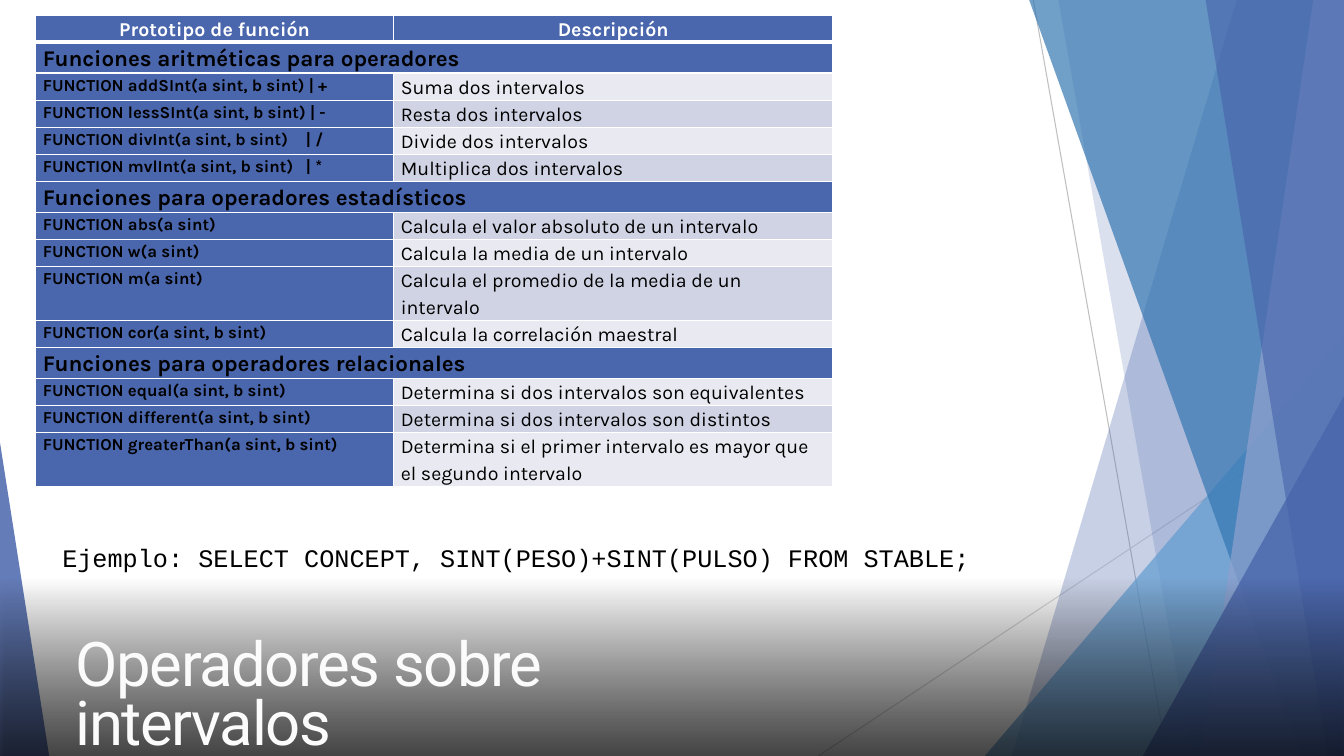
import dataclasses
import typing

import lxml.etree
import pptx
import pptx.dml.color
import pptx.enum.shapes
import pptx.enum.text
import pptx.oxml.ns
import pptx.util

Cm = pptx.util.Cm
Pt = pptx.util.Pt
qn = pptx.oxml.ns.qn
WIDTH, HEIGHT = 33.87, 19.05


@dataclasses.dataclass(frozen=True)
class Theme:
    blue: str = "4A66AC"
    sky: str = "629DD1"
    ocean: str = "3477B2"
    lavender: str = "90A2CF"
    band_light: str = "E9EAF1"
    band_dark: str = "D0D3E3"
    black: str = "000000"
    white: str = "FFFFFF"
    title_white: str = "FBFBFB"
    line_dark: str = "BFBFBF"
    line_light: str = "D9D9D9"
    title_size: int = 44
    example_size: int = 18
    section_size: int = 16
    body_size: int = 14
    function_size: int = 12
    title_font: str = "Roboto"
    table_font: str = "Karla"
    code_font: str = "Courier New"


THEME = Theme()


@dataclasses.dataclass(frozen=True)
class Ray:
    x1: float
    y1: float
    x2: float
    y2: float
    color: str


@dataclasses.dataclass(frozen=True)
class Band:
    top_x: float
    bottom_x: float
    color: str
    opacity: int


@dataclasses.dataclass(frozen=True)
class Corner:
    left: float
    width: float
    height: float
    apex: float
    color: str
    opacity: int


@dataclasses.dataclass(frozen=True)
class Row:
    name: str
    description: str = ""
    height: float = 0.61


RAYS = [
    Ray(26.04, 0, 29.41, HEIGHT, THEME.line_dark),
    Ray(WIDTH, 10.24, 20.62, HEIGHT, THEME.line_light),
]
FACETS = [
    Band(31.17, 25.5, THEME.blue, 30),
    Band(26.67, 30.02, THEME.blue, 20),
    Corner(24.82, 9.05, 10.59, 1, THEME.sky, 72),
    Band(25.93, 32.79, THEME.ocean, 70),
    Band(33.1, 30.28, THEME.lavender, 70),
    Band(30.38, 33.45, THEME.blue, 65),
    Corner(28.8, 5.07, 9.07, 1, THEME.blue, 80),
    Corner(0, 1.24, 7.9, 0, THEME.blue, 85),
]
ROWS = [
    Row("Prototipo de función", "Descripción"),
    Row("Funciones aritméticas para operadores"),
    Row("FUNCTION addSInt(a sint, b sint) | +", "Suma dos intervalos"),
    Row("FUNCTION lessSInt(a sint, b sint) | -", "Resta dos intervalos"),
    Row("FUNCTION divInt(a sint, b sint)\t| /", "Divide dos intervalos"),
    Row("FUNCTION mvlInt(a sint, b sint)\t| *", "Multiplica dos intervalos"),
    Row("Funciones para operadores estadísticos"),
    Row("FUNCTION abs(a sint)", "Calcula el valor absoluto de un intervalo"),
    Row("FUNCTION w(a sint)", "Calcula la media de un intervalo"),
    Row("FUNCTION m(a sint)", "Calcula el promedio de la media de un intervalo", 1.27),
    Row("FUNCTION cor(a sint, b sint)", "Calcula la correlación maestral"),
    Row("Funciones para operadores relacionales"),
    Row("FUNCTION equal(a sint, b sint)", "Determina si dos intervalos son equivalentes"),
    Row("FUNCTION different(a sint, b sint)", "Determina si dos intervalos son distintos"),
    Row("FUNCTION greaterThan(a sint, b sint)",
        "Determina si el primer intervalo es mayor que el segundo intervalo", 1.27),
]


def rgb(color: str) -> pptx.dml.color.RGBColor:
    return pptx.dml.color.RGBColor.from_string(color)


def child(parent: typing.Any, tag: str, **attrs: typing.Any) -> typing.Any:
    values = {key: str(value) for key, value in attrs.items()}
    return lxml.etree.SubElement(parent, qn(tag), values)


def set_opacity(color: typing.Any, percent: int) -> None:
    child(color, "a:alpha", val=percent * 1000)


def add_run(p: typing.Any, text: str, font: str, size: int, color: str, bold: bool = False) -> typing.Any:
    r = p.add_run()
    r.text = text
    r.font.name, r.font.size, r.font.bold = font, Pt(size), bold
    r.font.color.rgb = rgb(color)
    return r


def add_ray(slide: typing.Any, ray: Ray) -> None:
    line = slide.shapes.add_connector(pptx.enum.shapes.MSO_CONNECTOR.STRAIGHT,
                                      Cm(ray.x1), Cm(ray.y1), Cm(ray.x2), Cm(ray.y2))
    line.line.color.rgb = rgb(ray.color)
    line.line.width = Pt(0.75)
    child(line._element.spPr, "a:effectLst")


def add_facet(slide: typing.Any, facet: typing.Union[Band, Corner]) -> None:
    if isinstance(facet, Band):
        outline = slide.shapes.build_freeform(Cm(facet.top_x), Cm(-0.02))
        outline.add_line_segments([(Cm(WIDTH), Cm(-0.02)), (Cm(WIDTH), Cm(HEIGHT)),
                                   (Cm(facet.bottom_x), Cm(HEIGHT))])
        sp = outline.convert_to_shape()
    else:
        sp = slide.shapes.add_shape(pptx.enum.shapes.MSO_SHAPE.ISOSCELES_TRIANGLE,
                                    Cm(facet.left), Cm(HEIGHT - facet.height),
                                    Cm(facet.width), Cm(facet.height))
        sp.adjustments[0] = facet.apex
    sp.shadow.inherit = False
    sp.fill.solid()
    sp.fill.fore_color.rgb = rgb(facet.color)
    set_opacity(next(sp._element.spPr.iter(qn("a:srgbClr"))), facet.opacity)
    sp.line.fill.background()


def add_shade(slide: typing.Any) -> None:
    sp = slide.shapes.add_shape(pptx.enum.shapes.MSO_SHAPE.RECTANGLE, 0, Cm(14.55), Cm(WIDTH), Cm(4.55))
    sp.fill.gradient()
    sp.fill.gradient_angle = 270
    for stop in sp.fill.gradient_stops:
        stop.color.rgb = rgb(THEME.black)
    for color, opacity in zip(sp._element.spPr.iter(qn("a:srgbClr")), (0, 67)):
        set_opacity(color, opacity)
    sp.line.fill.background()
    sp.shadow.inherit = False
    effects = sp._element.spPr.find(qn("a:effectLst"))
    shadow = child(effects, "a:outerShdw", blurRad=Pt(3), dist=Pt(2), dir=5400000, rotWithShape=0)
    set_opacity(child(shadow, "a:srgbClr", val=THEME.black), 35)


def format_title(slide: typing.Any) -> None:
    sp = slide.shapes.title
    sp._element.getparent().append(sp._element)
    sp.left, sp.top, sp.width, sp.height = Cm(1.65), Cm(15.98), Cm(18.54), Cm(1.75)
    tf = sp.text_frame
    tf.word_wrap = True
    tf.auto_size = pptx.enum.text.MSO_AUTO_SIZE.SHAPE_TO_FIT_TEXT
    tf.vertical_anchor = pptx.enum.text.MSO_ANCHOR.TOP
    p = tf.paragraphs[0]
    p.alignment = pptx.enum.text.PP_ALIGN.LEFT
    p.line_spacing = 0.8
    r = add_run(p, "Operadores sobre intervalos", THEME.title_font, THEME.title_size, THEME.title_white)
    r.font._element.set("spc", "-100")


def add_example(slide: typing.Any) -> None:
    tf = slide.shapes.add_textbox(Cm(1.32), Cm(13.54), Cm(28.68), Cm(1.02)).text_frame
    tf.word_wrap = True
    tf.auto_size = pptx.enum.text.MSO_AUTO_SIZE.SHAPE_TO_FIT_TEXT
    add_run(tf.paragraphs[0], "Ejemplo: SELECT CONCEPT, SINT(PESO)+SINT(PULSO) FROM STABLE;",
            THEME.code_font, THEME.example_size, THEME.black)


def format_cell(cell: typing.Any, fill: str, top: int, bottom: int) -> None:
    cell.margin_left = cell.margin_right = Cm(0.18)
    cell.margin_top = cell.margin_bottom = 0
    cell.fill.solid()
    cell.fill.fore_color.rgb = rgb(fill)
    tc_pr = cell._tc.get_or_add_tcPr()
    for i, (side, width) in enumerate(zip("LRTB", (1, 1, top, bottom))):
        line = child(tc_pr, f"a:ln{side}", w=Pt(width))
        child(child(line, "a:solidFill"), "a:srgbClr", val=THEME.white)
        tc_pr.insert(i, line)


def add_functions_table(slide: typing.Any) -> None:
    table = slide.shapes.add_table(len(ROWS), 2, Cm(0.9), Cm(0.38), Cm(20.09), Cm(11.15)).table
    table.columns[0].width, table.columns[1].width = Cm(9.02), Cm(11.07)
    for i, row in enumerate(ROWS):
        table.rows[i].height = Cm(row.height)
        header, section = i == 0, not row.description
        band = THEME.band_dark if i % 2 else THEME.band_light
        for j, text in enumerate((row.name, row.description)):
            cell = table.cell(i, j)
            body = j == 1 and not header and not section
            format_cell(cell, band if body else THEME.blue, 3 if i == 1 else 1, 3 if header else 1)
            if not text:
                continue
            p = cell.text_frame.paragraphs[0]
            p.line_spacing = 1.15
            if header:
                p.alignment = pptx.enum.text.PP_ALIGN.CENTER
            if "\t" in text:
                child(child(p._p.get_or_add_pPr(), "a:tabLst"), "a:tab", pos=Cm(6.63), algn="l")
            size = (THEME.section_size if section else
                    THEME.body_size if header or body else THEME.function_size)
            add_run(p, text, THEME.table_font, size, THEME.white if header else THEME.black, not body)
        if section:
            table.cell(i, 0).merge(table.cell(i, 1))


def main() -> None:
    prs = pptx.Presentation()
    prs.slide_width, prs.slide_height = Cm(WIDTH), Cm(HEIGHT)
    slide = prs.slides.add_slide(prs.slide_layouts[5])
    for ray in RAYS:
        add_ray(slide, ray)
    for facet in FACETS:
        add_facet(slide, facet)
    add_shade(slide)
    format_title(slide)
    add_example(slide)
    add_functions_table(slide)
    prs.save("out.pptx")


if __name__ == "__main__":
    main()
